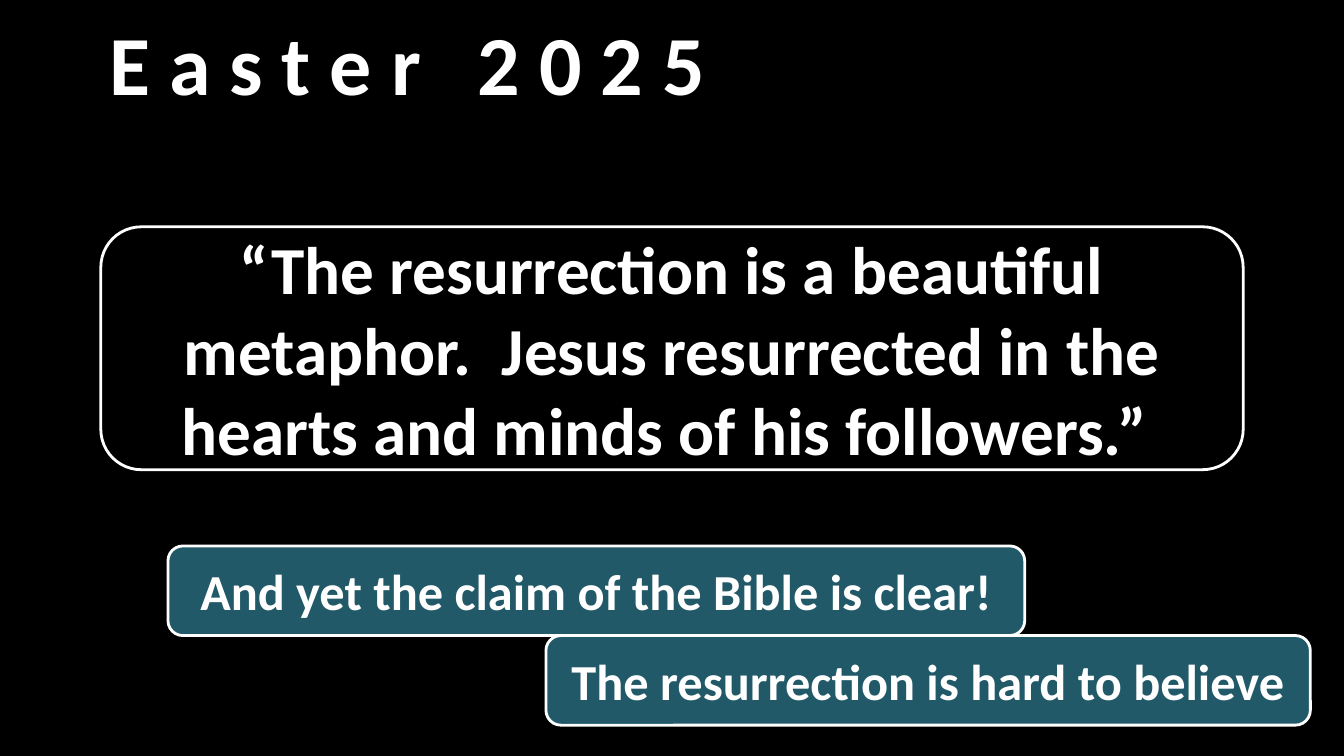
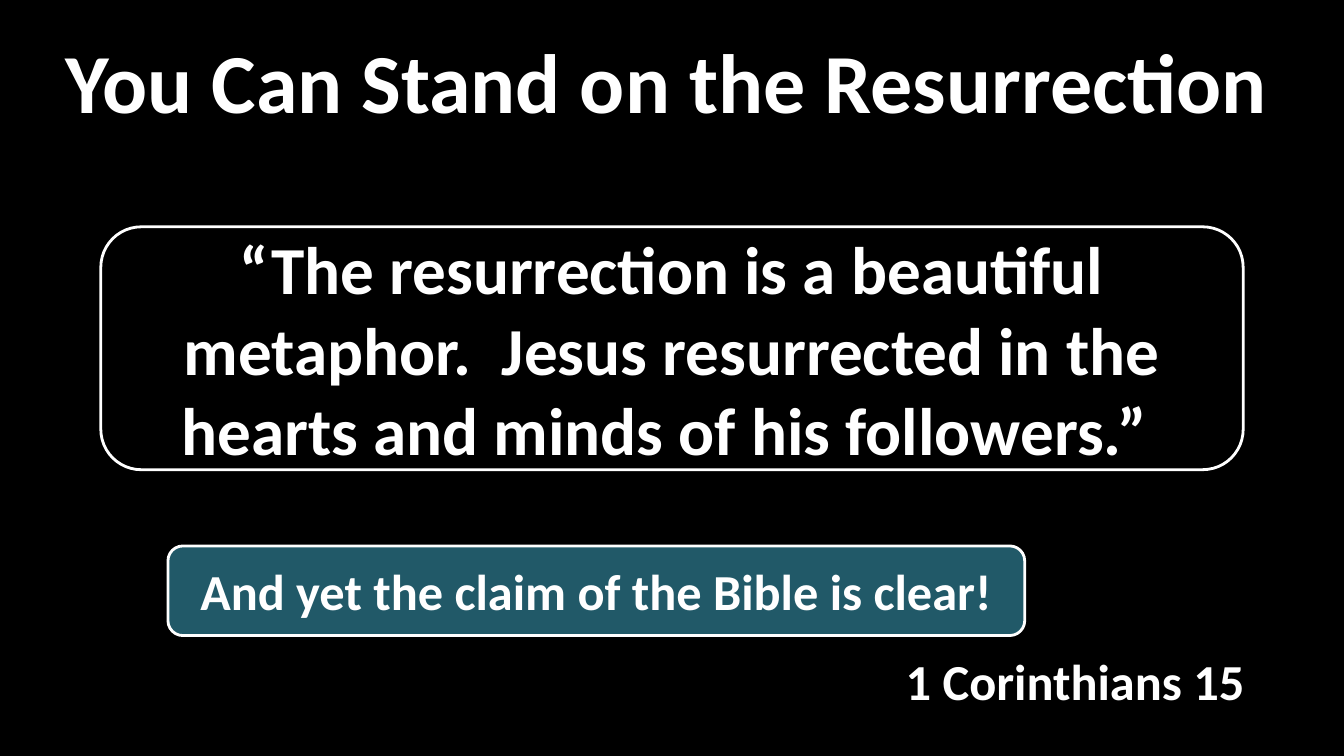
from dataclasses import dataclass

from pptx import Presentation
from pptx.dml.color import RGBColor
from pptx.enum.shapes import MSO_SHAPE
from pptx.enum.text import MSO_ANCHOR, PP_ALIGN
from pptx.util import Pt


@dataclass(frozen=True)
class Theme:
    font: str = "Calibri"
    black: RGBColor = RGBColor(0x00, 0x00, 0x00)
    white: RGBColor = RGBColor(0xFF, 0xFF, 0xFF)
    teal: RGBColor = RGBColor(0x21, 0x59, 0x68)
    title_size: int = 60
    quote_size: int = 48
    point_size: int = 36
    outline: int = 2
    title_height: int = 75
    quote_height: float = 173.5
    point_height: int = 64
    claim_top: int = 390


THEME = Theme()
# The closing line sits directly below the claim and shares its right edge
CLOSING_TOP = THEME.claim_top + THEME.point_height
CLOSING_RIGHT = 936

QUOTE = ("“The resurrection is a beautiful metaphor.  Jesus resurrected "
         "in the hearts and minds of his followers.” ")
CLAIM = "And yet the claim of the Bible is clear!"


def write(shape, text, size):
    """Put bold white text in the middle of a shape."""
    frame = shape.text_frame
    frame.word_wrap = True
    frame.vertical_anchor = MSO_ANCHOR.MIDDLE
    line = frame.paragraphs[0]
    line.text = text
    line.alignment = PP_ALIGN.CENTER
    line.font.name = THEME.font
    line.font.size = Pt(size)
    line.font.bold = True
    line.font.color.rgb = THEME.white


def add_label(slide, text, size, left, top, width, height):
    """Add text without a frame."""
    label = slide.shapes.add_textbox(Pt(left), Pt(top), Pt(width), Pt(height))
    write(label, text, size)


def add_panel(slide, text, size, fill, left, top, width, height):
    """Add text in a rounded, outlined panel."""
    panel = slide.shapes.add_shape(MSO_SHAPE.ROUNDED_RECTANGLE,
                                   Pt(left), Pt(top), Pt(width), Pt(height))
    panel.shadow.inherit = False
    panel.fill.solid()
    panel.fill.fore_color.rgb = fill
    panel.line.color.rgb = THEME.white
    panel.line.width = Pt(THEME.outline)
    write(panel, text, size)


def add_title(slide, text, left, top, width):
    add_label(slide, text, THEME.title_size,
              left, top, width, THEME.title_height)


def add_point(slide, text, left, top, width):
    add_panel(slide, text, THEME.point_size, THEME.teal,
              left, top, width, THEME.point_height)


def add_quote_and_claim(slide):
    add_panel(slide, QUOTE, THEME.quote_size, THEME.black,
              72, 162, 816, THEME.quote_height)
    add_point(slide, CLAIM, 120, THEME.claim_top, 612)


def new_slide(deck):
    slide = deck.slides.add_slide(deck.slide_layouts[6])
    slide.background.fill.solid()
    slide.background.fill.fore_color.rgb = THEME.black
    return slide


def main():
    deck = Presentation()
    deck.slide_width, deck.slide_height = Pt(960), Pt(540)

    # Easter: the objection and the claim
    easter = new_slide(deck)
    add_title(easter, "E a s t e r   2 0 2 5", 18, 7, 546)
    add_point(easter, "The resurrection is hard to believe",
              CLOSING_RIGHT - 546, CLOSING_TOP, 546)
    add_quote_and_claim(easter)

    # Answer: the claim and its passage
    answer = new_slide(deck)
    add_quote_and_claim(answer)
    add_label(answer, "1 Corinthians 15", THEME.point_size,
              CLOSING_RIGHT - 336, CLOSING_TOP, 336, THEME.point_height)
    add_title(answer, "You Can Stand on the Resurrection ", 30, 19.5, 906)

    deck.save("out.pptx")


if __name__ == "__main__":
    main()
